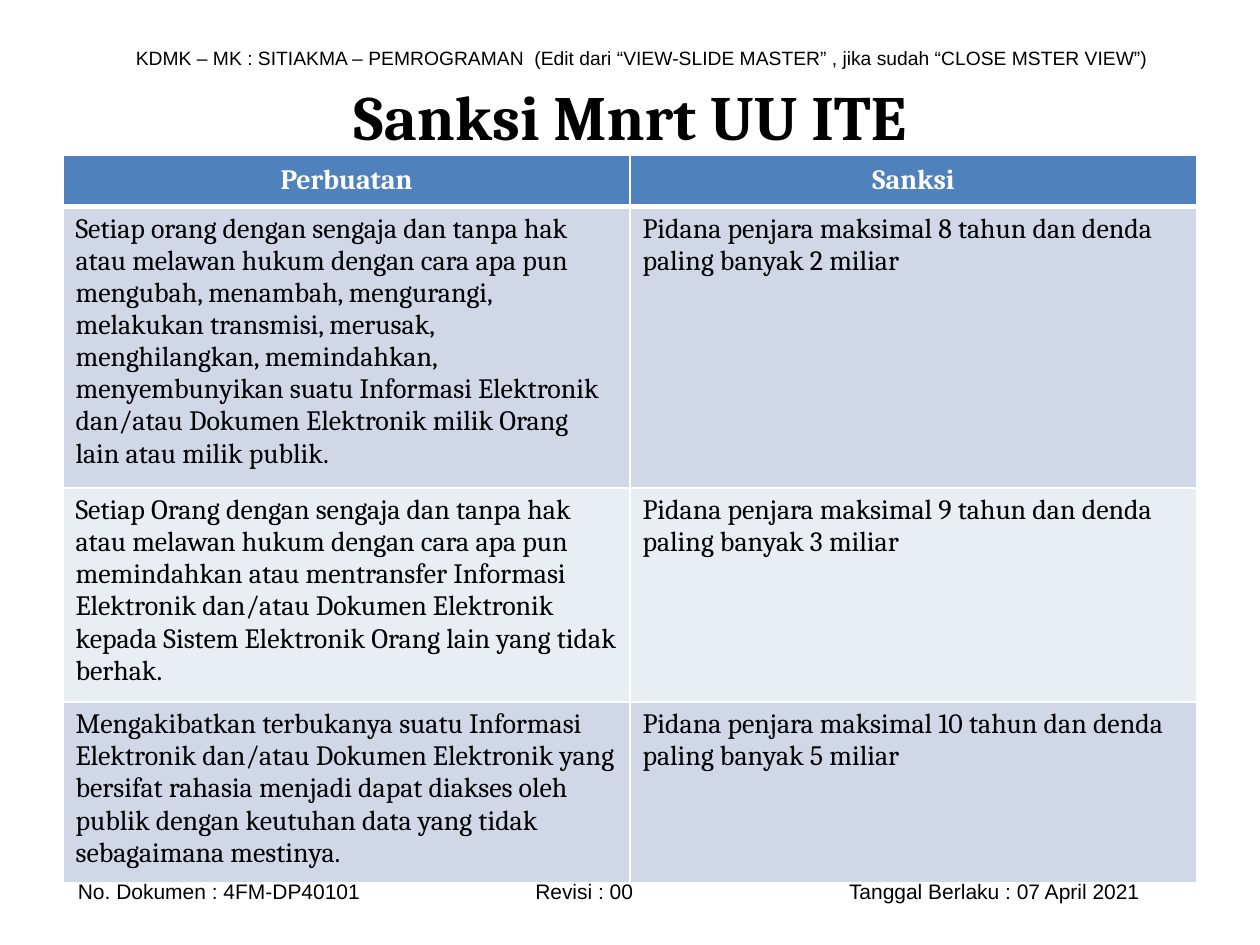
from dataclasses import dataclass

from pptx import Presentation
from pptx import util as u
from pptx.dml.color import RGBColor
from pptx.enum import text
from pptx.oxml.ns import qn
from lxml import etree

BLACK = RGBColor(0x00, 0x00, 0x00)
WHITE = RGBColor(0xFF, 0xFF, 0xFF)
BLUE = RGBColor(0x4F, 0x81, 0xBD)
BAND_DARK = RGBColor(0xD0, 0xD8, 0xE8)
BAND_LIGHT = RGBColor(0xE9, 0xED, 0xF4)

LEFT, CENTER = text.PP_ALIGN.LEFT, text.PP_ALIGN.CENTER
HEADING = {"name": "Cambria", "size": u.Pt(16), "bold": True}
BODY = {"name": "Cambria", "size": u.Pt(16), "bold": False}


@dataclass
class Label:
    content: str
    box: tuple[float, float, float, float]
    font: dict
    align: text.PP_ALIGN = LEFT
    tabs: tuple[float, ...] = ()


@dataclass
class Row:
    act: str
    sanction: str
    height: float


LABELS = [
    Label("KDMK – MK : SITIAKMA – PEMROGRAMAN  (Edit dari “VIEW-SLIDE MASTER” , "
          "jika sudah “CLOSE MSTER VIEW”)",
          (0.98, 0.31, 8.35, 0.29), {"name": "Arial", "size": u.Pt(11)}),
    Label("No. Dokumen : 4FM-DP40101\tRevisi : 00\tTanggal Berlaku : 07 April 2021",
          (0.52, 6.92, 9.13, 0.3), {"name": "Arial", "size": u.Pt(12)},
          tabs=(3.63, 6.12)),
    Label("Sanksi Mnrt UU ITE", (0.5, 0.29, 9, 1.25),
          {"name": "Cambria", "size": u.Pt(36), "bold": True}, CENTER),
]

ROWS = [
    Row("Perbuatan", "Sanksi", 0.41),
    Row("Setiap orang dengan sengaja dan tanpa hak atau melawan hukum dengan cara "
        "apa pun mengubah, menambah, mengurangi, melakukan transmisi, merusak, "
        "menghilangkan, memindahkan, menyembunyikan suatu Informasi Elektronik "
        "dan/atau Dokumen Elektronik milik Orang lain atau milik publik.",
        "Pidana penjara maksimal 8 tahun dan denda paling banyak 2 miliar", 2.23),
    Row("Setiap Orang dengan sengaja dan tanpa hak atau melawan hukum dengan cara "
        "apa pun memindahkan atau mentransfer Informasi Elektronik dan/atau "
        "Dokumen Elektronik kepada Sistem Elektronik Orang lain yang tidak berhak.",
        "Pidana penjara maksimal 9 tahun dan denda paling banyak 3 miliar", 1.7),
    Row("Mengakibatkan terbukanya suatu Informasi Elektronik dan/atau Dokumen "
        "Elektronik yang bersifat rahasia menjadi dapat diakses oleh publik dengan "
        "keutuhan data yang tidak sebagaimana mestinya.",
        "Pidana penjara maksimal 10 tahun dan denda paling banyak 5 miliar", 1.43),
]


def write(paragraph, content: str, font: dict, color: RGBColor, align) -> None:
    paragraph.alignment = align
    run = paragraph.add_run()
    run.text = content
    for name, value in font.items():
        setattr(run.font, name, value)
    run.font.color.rgb = color


def add_tabs(paragraph, positions: tuple[float, ...]) -> None:
    properties = paragraph._p.get_or_add_pPr()
    tab_list = etree.SubElement(properties, qn("a:tabLst"))
    for position in positions:
        etree.SubElement(tab_list, qn("a:tab"),
                         pos=str(u.Inches(position)), algn="l")


def add_label(slide, label: Label) -> None:
    shape = slide.shapes.add_textbox(*(u.Inches(value) for value in label.box))
    frame = shape.text_frame
    frame.word_wrap = True
    frame.vertical_anchor = text.MSO_ANCHOR.MIDDLE
    paragraph = frame.paragraphs[0]
    if label.tabs:
        add_tabs(paragraph, label.tabs)
    write(paragraph, label.content, label.font, BLACK, label.align)


def add_borders(cell, widths: dict[str, float]) -> None:
    properties = cell._tc.get_or_add_tcPr()
    for side, width in widths.items():
        line = etree.SubElement(properties, qn(f"a:ln{side}"), w=str(u.Pt(width)))
        fill = etree.SubElement(line, qn("a:solidFill"))
        etree.SubElement(fill, qn("a:srgbClr"), val=str(WHITE))


def add_sanction_table(slide, rows: list[Row]) -> None:
    height = sum(row.height for row in rows)
    table = slide.shapes.add_table(
        len(rows), 2, u.Inches(0.5), u.Inches(1.23),
        u.Inches(9), u.Inches(height)).table
    for index, row in enumerate(rows):
        table.rows[index].height = u.Inches(row.height)
        header = index == 0
        band = BAND_DARK if index % 2 else BAND_LIGHT
        borders = {"L": 1, "R": 1, "T": 3 if index == 1 else 1, "B": 3 if header else 1}
        for column, content in enumerate((row.act, row.sanction)):
            cell = table.cell(index, column)
            add_borders(cell, borders)
            cell.fill.solid()
            cell.fill.fore_color.rgb = BLUE if header else band
            cell.vertical_anchor = (text.MSO_ANCHOR.MIDDLE if header
                                    else text.MSO_ANCHOR.TOP)
            write(cell.text_frame.paragraphs[0], content,
                  HEADING if header else BODY,
                  WHITE if header else BLACK, CENTER if header else LEFT)


def main() -> None:
    presentation = Presentation()
    presentation.slide_width = u.Inches(10)
    presentation.slide_height = u.Inches(7.5)
    slide = presentation.slides.add_slide(presentation.slide_layouts[6])

    # Header line, footer line and title
    for label in LABELS:
        add_label(slide, label)

    # Acts and their sanctions
    add_sanction_table(slide, ROWS)

    presentation.save("out.pptx")


if __name__ == "__main__":
    main()
